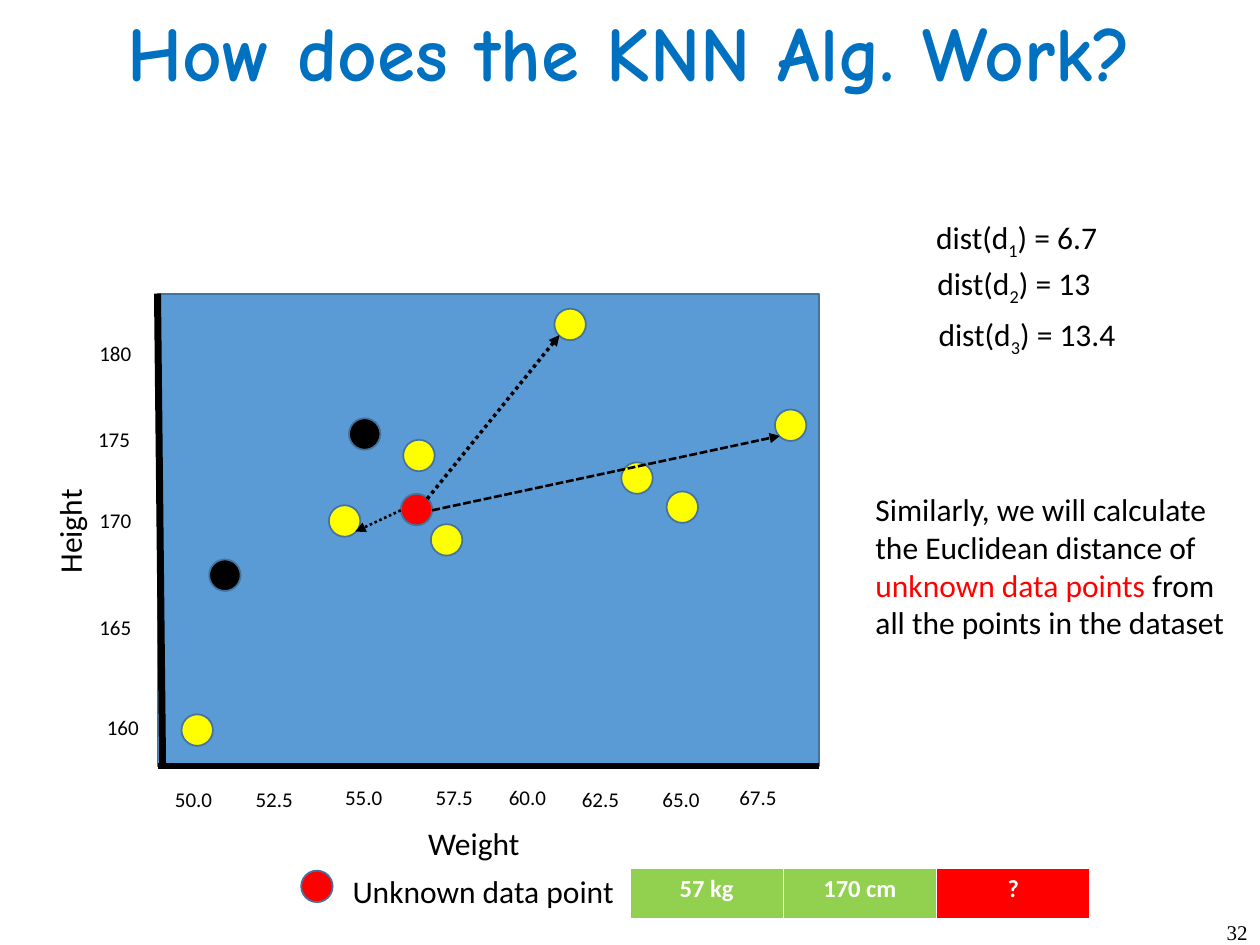
from dataclasses import dataclass

from lxml import etree
from pptx import Presentation
from pptx.dml.color import RGBColor
from pptx.enum.dml import MSO_LINE
from pptx.enum.shapes import MSO_CONNECTOR, MSO_SHAPE
from pptx.enum.text import MSO_ANCHOR, MSO_AUTO_SIZE, PP_ALIGN
from pptx.oxml.ns import qn
from pptx.util import Pt

OVAL, RECTANGLE = MSO_SHAPE.OVAL, MSO_SHAPE.RECTANGLE
STRAIGHT = MSO_CONNECTOR.STRAIGHT
DOTTED, DASHED = MSO_LINE.ROUND_DOT, MSO_LINE.SQUARE_DOT
SYS_DASH = MSO_LINE.SQUARE_DOT
LEFT, CENTER, RIGHT = PP_ALIGN.LEFT, PP_ALIGN.CENTER, PP_ALIGN.RIGHT
TOP, MIDDLE = MSO_ANCHOR.TOP, MSO_ANCHOR.MIDDLE
FIT_TEXT = MSO_AUTO_SIZE.SHAPE_TO_FIT_TEXT

COLORS = {
    "title": "0070C0", "plot": "5B9BD5", "outline": "43739E",
    "black": "000000", "yellow": "FFFF00", "red": "FF0000",
    "green": "92D050", "white": "FFFFFF",
}
BODY = {"name": "Calibri", "size": Pt(18)}
TICK = {"name": "Calibri", "size": Pt(12)}
TITLE = {"name": "Comic Neue", "size": Pt(44), "bold": True}
PAGE_NUMBER = {"name": "Times New Roman", "size": Pt(12)}
CELL = {"name": "Calibri", "size": Pt(14), "bold": True}
DOT_SIZE = 18


@dataclass
class Span:
    text: str
    color: str = "black"
    baseline: int = 0


@dataclass
class Label:
    spans: list[Span]
    left: float
    top: float
    width: float
    height: float
    font: dict
    wrap: bool = False
    align: int = LEFT
    anchor: int = TOP
    rotation: float = 0


@dataclass
class Segment:
    start: tuple[float, float]
    end: tuple[float, float]
    width: float
    dash: int | None = None
    arrow: bool = False


def rgb(color: str) -> RGBColor:
    return RGBColor.from_string(COLORS[color])


def write_spans(paragraph, spans: list[Span], font: dict, align: int) -> None:
    paragraph.alignment = align
    for span in spans:
        run = paragraph.add_run()
        run.text = span.text
        for attribute, value in font.items():
            setattr(run.font, attribute, value)
        run.font.color.rgb = rgb(span.color)
        if span.baseline:
            run.font._element.set("baseline", str(span.baseline * 1000))


def draw_label(slide, label: Label) -> None:
    box = slide.shapes.add_textbox(
        Pt(label.left), Pt(label.top), Pt(label.width), Pt(label.height))
    box.rotation = label.rotation
    frame = box.text_frame
    frame.word_wrap = label.wrap
    frame.vertical_anchor = label.anchor
    if not label.wrap:
        frame.auto_size = FIT_TEXT
    write_spans(frame.paragraphs[0], label.spans, label.font, label.align)


def draw_filled(slide, kind: int, left: float, top: float, width: float,
                height: float, color: str) -> None:
    figure = slide.shapes.add_shape(kind, Pt(left), Pt(top), Pt(width), Pt(height))
    figure.shadow.inherit = False
    figure.fill.solid()
    figure.fill.fore_color.rgb = rgb(color)
    figure.line.color.rgb = rgb("outline")
    figure.line.width = Pt(1)


def draw_dot(slide, left: float, top: float, color: str) -> None:
    draw_filled(slide, OVAL, left, top, DOT_SIZE, DOT_SIZE, color)


def draw_segment(slide, segment: Segment) -> None:
    connector = slide.shapes.add_connector(
        STRAIGHT, *(Pt(value) for value in segment.start + segment.end))
    line = connector.line
    line.color.rgb = rgb("black")
    line.width = Pt(segment.width)
    if segment.dash is not None:
        line.dash_style = segment.dash
    if segment.arrow:
        etree.SubElement(line._get_or_add_ln(), qn("a:tailEnd"), type="triangle")
    etree.SubElement(connector._element.spPr, qn("a:effectLst"))


def draw_query_table(slide) -> None:
    """Show the weight, height and unknown class of the new point."""
    cells = [("57 kg", "green"), ("170 cm", "green"), ("?", "red")]
    table = slide.shapes.add_table(
        1, len(cells), Pt(360), Pt(496.1), Pt(262.8), Pt(28.8)).table
    for cell, (text, color) in zip(table.rows[0].cells, cells):
        cell.fill.solid()
        cell.fill.fore_color.rgb = rgb(color)
        write_spans(cell.text_frame.paragraphs[0], [Span(text, "white")], CELL, CENTER)


WEIGHT_TICKS = [
    ("50.0", 92.9, 445.7), ("52.5", 139, 445.7), ("55.0", 190.1, 445),
    ("57.5", 241.9, 445), ("60.0", 283.7, 445), ("62.5", 325.4, 445.7),
    ("65.0", 371.5, 445.7), ("67.5", 415.4, 445),
]
HEIGHT_TICKS = [
    ("180", 49.7, 190.8), ("175", 49, 240.5), ("170", 49.7, 286.6),
    ("165", 49.7, 347.8), ("160", 54, 404.6),
]
DOTS = {
    "black": [(119.5, 319.7), (199.4, 239)],
    "yellow": [(355, 264.2), (380.9, 280.8), (230.4, 251.3), (316.8, 176.4),
               (442.8, 234), (187.9, 288.7), (103.7, 408.2), (246.2, 299.5)],
    "red": [(229, 282.2), (172.1, 497.5)],
}
AXES = [
    Segment((90, 437.8), (468, 437.8), 3.75),
    Segment((90, 167.8), (92.9, 437.8), 4),
]
DISTANCE_ARROWS = [
    Segment((229, 291.6), (203, 303.8), 1.5, DOTTED, True),
    Segment((244.1, 285.1), (319.7, 191.5), 2, DOTTED, True),
    Segment((247, 291.6), (445.7, 249.1), 1.5, SYS_DASH, True),
]
DISTANCES = [
    ("1", "6.7", 527.8, 121, 111.6),
    ("2", "13", 528.5, 147.6, 107.3),
    ("3", "13.4", 529.2, 176.4, 121),
]
EXPLANATION = [
    Span("Similarly, we will calculate the Euclidean distance of "),
    Span("unknown data points ", "red"),
    Span("from all the points in the dataset"),
]
LABELS = [
    Label([Span("How does the KNN Alg. Work?", "title")], 0, 0, 720, 58.3, TITLE,
          wrap=True, align=CENTER, anchor=MIDDLE),
    *(Label([Span(text)], left, top, 36, 21.6, TICK)
      for text, left, top in WEIGHT_TICKS),
    *(Label([Span(text)], left, top, 33.1, 21.6, TICK)
      for text, left, top in HEIGHT_TICKS),
    Label([Span("Weight")], 237.6, 467.3, 67.7, 28.8, BODY),
    Label([Span("Height")], 7.9, 288.7, 63.4, 28.8, BODY, rotation=270),
    Label([Span("Unknown data point")], 194.4, 494.6, 165.6, 28.8, BODY),
    *(Label([Span("dist(d"), Span(index, baseline=-25), Span(f") = {value}")],
            left, top, width, 28.8, BODY)
      for index, value, left, top, width in DISTANCES),
    Label(EXPLANATION, 493.2, 276.5, 218.2, 94.3, BODY, wrap=True),
    Label([Span("32")], 570.2, 522, 149.8, 18, PAGE_NUMBER, wrap=True, align=RIGHT),
]


def main() -> None:
    presentation = Presentation()
    presentation.slide_width, presentation.slide_height = Pt(720), Pt(540)
    slide = presentation.slides.add_slide(presentation.slide_layouts[6])
    draw_filled(slide, RECTANGLE, 90, 167.8, 378, 270, "plot")
    for axis in AXES:
        draw_segment(slide, axis)
    for color, positions in DOTS.items():
        for left, top in positions:
            draw_dot(slide, left, top, color)
    for arrow in DISTANCE_ARROWS:
        draw_segment(slide, arrow)
    for label in LABELS:
        draw_label(slide, label)
    draw_query_table(slide)
    presentation.save("out.pptx")


if __name__ == "__main__":
    main()
